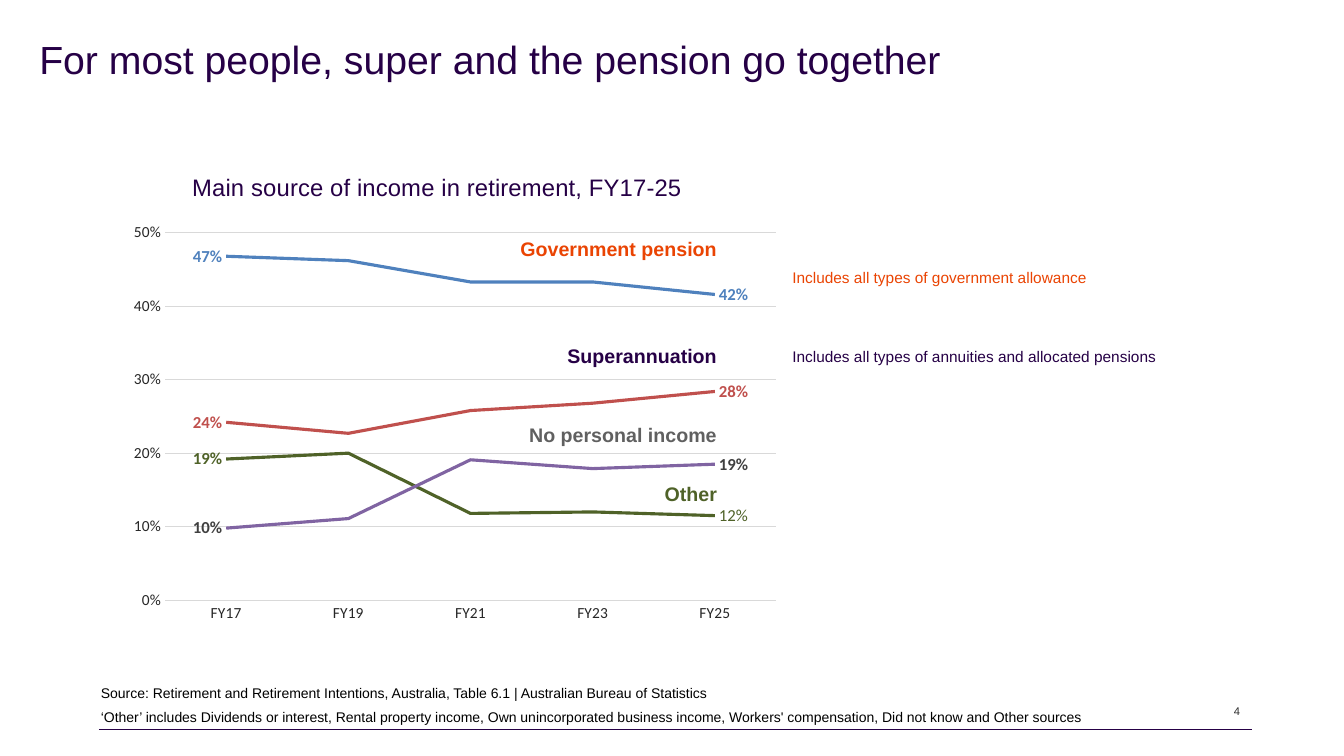
import pptx
import pptx.chart.data
import pptx.dml.color
import pptx.enum.chart
import pptx.enum.shapes
import pptx.enum.text
import pptx.oxml
import pptx.oxml.ns
import pptx.util
from lxml import etree

Inches = pptx.util.Inches
Pt = pptx.util.Pt
RGBColor = pptx.dml.color.RGBColor
ALIGN = pptx.enum.text.PP_ALIGN
ANCHOR = pptx.enum.text.MSO_ANCHOR
TICK = pptx.enum.chart.XL_TICK_MARK
LABEL = pptx.enum.chart.XL_LABEL_POSITION

PURPLE = RGBColor(0x26, 0x00, 0x46)
ORANGE = RGBColor(0xEA, 0x44, 0x03)
GREEN = RGBColor(0x4F, 0x62, 0x28)
BLUE = RGBColor(0x4F, 0x81, 0xBD)
RED = RGBColor(0xC0, 0x50, 0x4D)
VIOLET = RGBColor(0x80, 0x64, 0xA2)
GREY = RGBColor(0x60, 0x60, 0x60)
CHARCOAL = RGBColor(0x40, 0x40, 0x40)
DARK = RGBColor(0x2E, 0x2E, 0x2E)
AXIS_TEXT = RGBColor(0x26, 0x26, 0x26)
GRID = RGBColor(0xD9, 0xD9, 0xD9)
BLACK = RGBColor(0, 0, 0)

YEARS = ["FY17", "FY19", "FY21", "FY23", "FY25"]
INCOME_SERIES = [
    ("Government pension", [0.468, 0.462, 0.433, 0.433, 0.416], BLUE, BLUE, True),
    ("Superannuation", [0.242, 0.227, 0.258, 0.268, 0.284], RED, RED, True),
    ("Other", [0.192, 0.2, 0.118, 0.12, 0.115], GREEN, GREEN, False),
    ("No personal income", [0.098, 0.111, 0.191, 0.179, 0.185], VIOLET, CHARCOAL, True),
]
SERIES_NAMES = [
    ("Government pension", 2.32, ORANGE),
    ("Superannuation", 3.38, PURPLE),
    ("No personal income", 4.16, GREY),
    ("Other", 4.75, GREEN),
]
SIDE_NOTES = [
    ("Includes all types of government allowance", 2.61, ORANGE),
    ("Includes all types of annuities and allocated pensions", 3.39, PURPLE),
]
FOOTNOTES = [
    "Source: Retirement and Retirement Intentions, Australia, Table 6.1 | Australian Bureau of Statistics",
    "‘Other’ includes Dividends or interest, Rental property income, Own unincorporated business income, "
    "Workers' compensation, Did not know and Other sources",
]


class Deck:
    text_font = "Arial"
    chart_font = "Calibri"

    def __init__(self):
        self.prs = pptx.Presentation()
        self.prs.slide_width = Inches(13.33)
        self.prs.slide_height = Inches(7.5)
        self.s = self.prs.slides.add_slide(self.prs.slide_layouts[6])

    def apply(self, target, **values):
        for name, value in values.items():
            setattr(target, name, value)

    def font(self, font, size, color, name=None, bold=False):
        self.apply(font, size=Pt(size), name=name or self.text_font, bold=bold)
        font.color.rgb = color

    def text(self, box, lines, size, color, bold=False, inset=True, anchor=ANCHOR.TOP,
             align=ALIGN.LEFT, spacing=0.95, gap=0):
        sp = self.s.shapes.add_textbox(*map(Inches, box))
        tf = sp.text_frame
        self.apply(tf, word_wrap=True, vertical_anchor=anchor)
        if not inset:
            self.apply(tf, margin_left=0, margin_right=0, margin_top=0, margin_bottom=0)
        for i, line in enumerate(lines):
            p = tf.paragraphs[0] if i == 0 else tf.add_paragraph()
            self.apply(p, alignment=align, line_spacing=spacing)
            if i:
                p.space_before = Pt(gap)
            r = p.add_run()
            r.text = line
            self.font(r.font, size, color, bold=bold)

    def rule(self, left, right, top, color, width):
        line = self.s.shapes.add_connector(
            pptx.enum.shapes.MSO_CONNECTOR.STRAIGHT,
            Inches(left), Inches(top), Inches(right), Inches(top))
        line.line.color.rgb = color
        line.line.width = Pt(width)
        etree.SubElement(line._element.spPr, pptx.oxml.ns.qn("a:effectLst"))

    def layout(self, parent, **values):
        for old in parent.findall(pptx.oxml.ns.qn("c:layout")):
            parent.remove(old)
        fields = "".join(f'<c:{k} val="{v}"/>' for k, v in values.items())
        return pptx.oxml.parse_xml(
            f'<c:layout {pptx.oxml.ns.nsdecls("c")}><c:manualLayout>{fields}'
            '</c:manualLayout></c:layout>')

    def line_chart(self, box, title, categories, series):
        data = pptx.chart.data.CategoryChartData(number_format="0%")
        data.categories = categories
        for name, values, *_ in series:
            data.add_series(name, values)
        chart = self.s.shapes.add_chart(
            pptx.enum.chart.XL_CHART_TYPE.LINE, *map(Inches, box), data).chart
        self.font(chart.font, 10, BLACK, self.chart_font)
        chart.has_legend = False
        self.chart_title(chart, title)
        self.axes(chart)
        for ser, (_, _, color, label_color, end_bold) in zip(chart.plots[0].series, series):
            ser.smooth = False
            ser.format.line.color.rgb = color
            ser.format.line.width = Pt(2.25)
            ser.data_labels.show_value = False
            ends = [(0, LABEL.LEFT, True), (len(categories) - 1, LABEL.RIGHT, end_bold)]
            for i, position, bold in ends:
                label = ser.points[i].data_label
                self.font(label.font, 12, label_color, self.chart_font, bold)
                label.position = position
        area = chart._chartSpace.chart.plotArea
        area.insert(0, self.layout(area, layoutTarget="inner", xMode="edge", yMode="edge",
                                   x=0.066, y=0.157, w=0.914, h=0.774))

    def chart_title(self, chart, title):
        p = chart.chart_title.text_frame.paragraphs[0]
        r = p.add_run()
        r.text = title
        self.font(r.font, 17, PURPLE)
        chart.chart_title.include_in_layout = False
        node = chart.chart_title._element
        layout = self.layout(node, xMode="edge", yMode="edge", x=0.1, y=0.02)
        node.find(pptx.oxml.ns.qn("c:tx")).addnext(layout)

    def axes(self, chart):
        for axis in (chart.category_axis, chart.value_axis):
            self.apply(axis, major_tick_mark=TICK.NONE, minor_tick_mark=TICK.NONE)
            self.font(axis.tick_labels.font, 11, AXIS_TEXT, self.chart_font)
        value = chart.value_axis
        self.apply(value, minimum_scale=0, maximum_scale=0.5, major_unit=0.1,
                   has_major_gridlines=True)
        self.apply(value.tick_labels, number_format="0%", number_format_is_linked=False)
        value.format.line.fill.background()
        for line in (chart.category_axis.format.line, value.major_gridlines.format.line):
            line.color.rgb = GRID
            line.width = Pt(0.75)


def main():
    deck = Deck()
    deck.rule(0.98, 12.42, 7.24, PURPLE, 0.5)
    deck.text((12.06, 6.97, 0.24, 0.15), ["4"], 8, DARK, inset=False,
              anchor=ANCHOR.BOTTOM, align=ALIGN.RIGHT)
    deck.text((0.39, 0.4, 11.5, 0.53), ["For most people, super and the pension go together"],
              28, PURPLE, inset=False, spacing=0.9)
    deck.text((1, 7.05, 10.75, 0.15), FOOTNOTES, 10, BLACK, inset=False,
              anchor=ANCHOR.BOTTOM, gap=6)
    deck.line_chart((1.2, 1.57, 6.63, 4.71), "Main source of income in retirement, FY17-25",
                    YEARS, INCOME_SERIES)
    for name, top, color in SERIES_NAMES:
        deck.text((4.88, top, 2.33, 0.33), [name], 14, color, bold=True, align=ALIGN.RIGHT)
    for note, top, color in SIDE_NOTES:
        deck.text((7.76, top, 4.13, 0.29), [note], 11, color, spacing=1.0)
    deck.prs.save("out.pptx")


if __name__ == "__main__":
    main()
